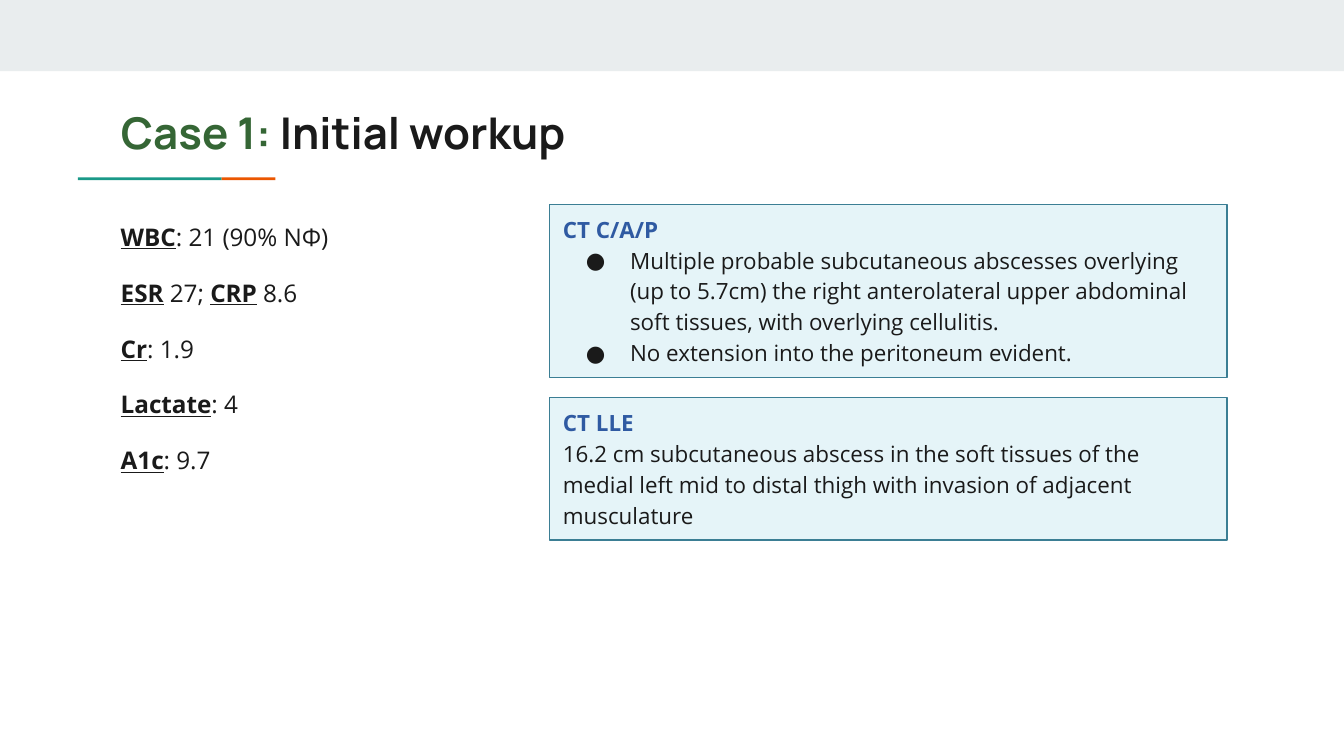
from pptx import Presentation
from pptx.dml.color import RGBColor
from pptx.enum.shapes import MSO_SHAPE
from pptx.enum.text import MSO_ANCHOR, MSO_AUTO_SIZE, PP_ALIGN
from pptx.oxml.ns import qn
from pptx.util import Inches, Pt
from lxml.etree import SubElement

COLORS = {
    "band": "E9EDEE", "teal": "1A9988", "orange": "EB5600",
    "green": "356635", "ink": "1A1A1A", "heading": "2F5AA2",
    "card": "E5F4F8", "card_line": "3B7E94",
}
BODY_FONT = "Open Sans"
LINE_SPACING = 1.15

# Each lab line is a list of (name, value) pairs.
LABS = [
    [("WBC", ": 21 (90% NΦ)")],
    [("ESR", " 27; "), ("CRP", " 8.6")],
    [("Cr", ": 1.9")],
    [("Lactate", ": 4")],
    [("A1c", ": 9.7")],
]
ABDOMEN_FINDINGS = [
    "Multiple probable subcutaneous abscesses overlying (up to 5.7cm) the right "
    "anterolateral upper abdominal soft tissues, with overlying cellulitis.",
    "No extension into the peritoneum evident.",
]
LEG_FINDINGS = [
    "16.2 cm subcutaneous abscess in the soft tissues of the medial left mid to "
    "distal thigh with invasion of adjacent musculature",
]


def color(name):
    return RGBColor.from_string(COLORS[name])


def set_font(font, name, size, color_name, bold=False):
    font.name = name
    font.size = Pt(size)
    font.bold = bold
    font.color.rgb = color(color_name)


def prepare_frame(shape, anchor):
    frame = shape.text_frame
    frame.word_wrap = True
    frame.auto_size = MSO_AUTO_SIZE.NONE
    frame.vertical_anchor = anchor
    frame.margin_left = frame.margin_right = Inches(0.1)
    frame.margin_top = frame.margin_bottom = Inches(0.1)
    return frame


def add_rectangle(page, left, top, width, height, fill, line=None):
    box = page.shapes.add_shape(MSO_SHAPE.RECTANGLE, Inches(left), Inches(top),
                                Inches(width), Inches(height))
    box.shadow.inherit = False
    box.fill.solid()
    box.fill.fore_color.rgb = color(fill)
    if line:
        box.line.color.rgb = color(line)
        box.line.width = Pt(0.75)
    else:
        box.line.fill.background()
    return box


def add_bullet(para):
    properties = para._p.get_or_add_pPr()
    properties.set("marL", str(Inches(0.5)))
    properties.set("indent", str(Inches(-0.33)))
    bullet_color = SubElement(properties, qn("a:buClr"))
    SubElement(bullet_color, qn("a:srgbClr")).set("val", COLORS["ink"])
    SubElement(properties, qn("a:buFont")).set("typeface", BODY_FONT)
    SubElement(properties, qn("a:buChar")).set("char", "●")


def add_accent_rule(page, left, top, width):
    teal_width = round(width * 0.73, 2)
    add_rectangle(page, left, top, teal_width, 0.02, "teal")
    add_rectangle(page, left + teal_width, top, width - teal_width, 0.02, "orange")


def place_title(page, left, top, width, height):
    title = page.shapes.title
    title.left, title.top = Inches(left), Inches(top)
    title.width, title.height = Inches(width), Inches(height)
    para = prepare_frame(title, MSO_ANCHOR.TOP).paragraphs[0]
    para.alignment = PP_ALIGN.LEFT
    for text, color_name in (("Case 1:", "green"), (" Initial workup", "ink")):
        span = para.add_run()
        span.text = text
        set_font(span.font, "Manrope", 23.4, color_name, bold=True)


def add_labs(page, left, top, width, height):
    box = page.shapes.add_textbox(Inches(left), Inches(top), Inches(width), Inches(height))
    frame = prepare_frame(box, MSO_ANCHOR.TOP)
    for index, pairs in enumerate(LABS):
        para = frame.add_paragraph() if index else frame.paragraphs[0]
        para.line_spacing = LINE_SPACING
        if index:
            para.space_before = Pt(12)
        set_font(para.font, BODY_FONT, 13, "ink")
        for name, value in pairs:
            label = para.add_run()
            label.text = name
            label.font.bold = label.font.underline = True
            para.add_run().text = value


def add_findings_card(page, left, top, width, height, heading, findings, bulleted=False):
    card = add_rectangle(page, left, top, width, height, "card", "card_line")
    frame = prepare_frame(card, MSO_ANCHOR.MIDDLE)
    para = frame.paragraphs[0]
    para.text = heading
    para.alignment = PP_ALIGN.LEFT
    set_font(para.font, BODY_FONT, 12, "heading", bold=True)
    for finding in findings:
        para = frame.add_paragraph()
        para.text = finding
        para.alignment = PP_ALIGN.LEFT
        para.line_spacing = LINE_SPACING
        if bulleted:
            add_bullet(para)
        set_font(para.font, BODY_FONT, 12, "ink")


def main():
    deck = Presentation()
    deck.slide_width = Inches(10)
    deck.slide_height = deck.slide_width * 9 // 16
    page = deck.slides.add_slide(deck.slide_layouts[5])
    add_rectangle(page, 0, 0, 10, 0.53, "band")
    add_accent_rule(page, 0.58, 1.32, 1.47)
    place_title(page, 0.8, 0.69, 8.41, 0.59)
    add_labs(page, 0.8, 1.52, 2.49, 2.47)
    add_findings_card(page, 4.09, 1.52, 5.04, 1.29, "CT C/A/P", ABDOMEN_FINDINGS, bulleted=True)
    add_findings_card(page, 4.09, 2.96, 5.04, 1.06, "CT LLE", LEG_FINDINGS)
    deck.save("out.pptx")


if __name__ == "__main__":
    main()
